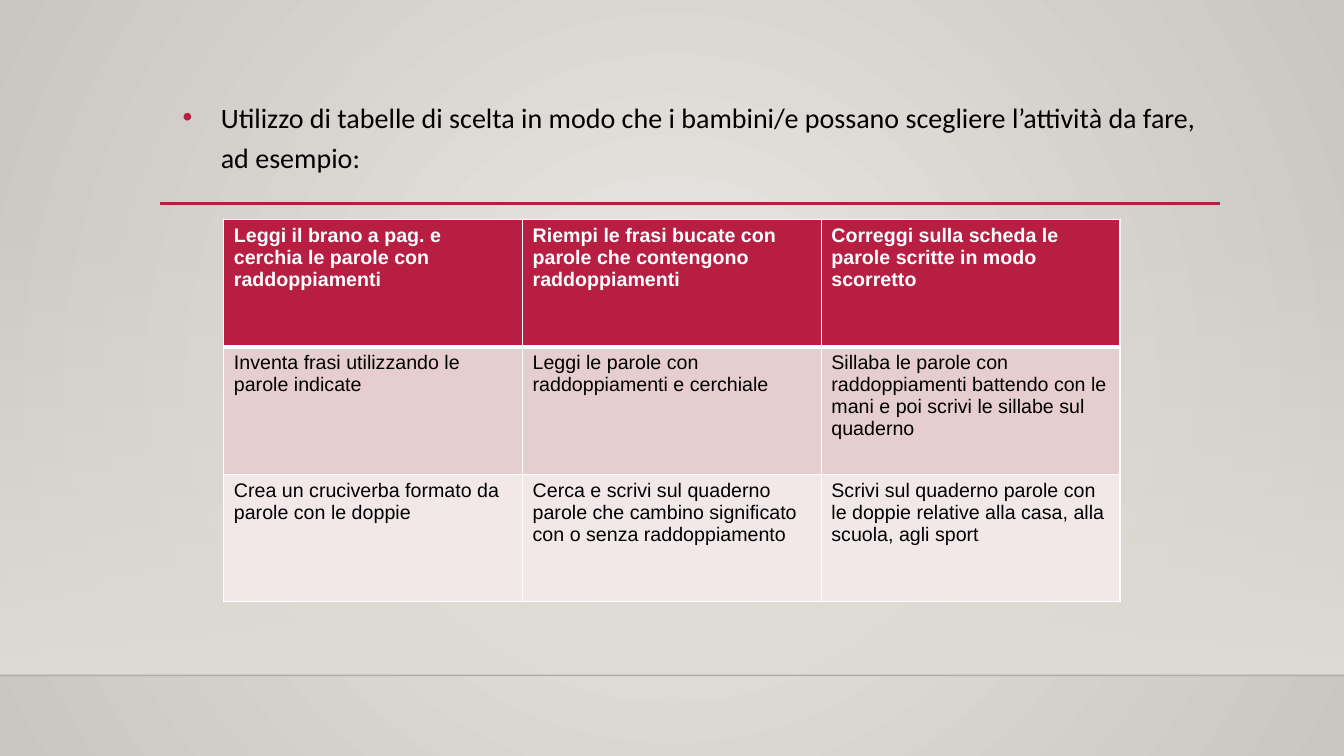
"""Builds the slide with the table of activities on double consonants."""
from lxml.etree import SubElement
from pptx import Presentation
from pptx.dml.color import RGBColor
from pptx.enum.shapes import MSO_CONNECTOR, MSO_SHAPE
from pptx.enum.text import MSO_ANCHOR, MSO_AUTO_SIZE, PP_ALIGN
from pptx.oxml.ns import qn
from pptx.util import Inches, Pt

RED, WHITE, BLACK = "B71E42", "FFFFFF", "000000"


def rgb(value):
    return RGBColor.from_string(value)


def write(tf, text, size=14, font="Arial", color=BLACK, bold=False):
    p = tf.paragraphs[0]
    p.alignment = PP_ALIGN.LEFT
    r = p.add_run()
    r.text = text
    r.font.size = Pt(size)
    r.font.name = font
    r.font.bold = bold
    r.font.color.rgb = rgb(color)
    return p


prs = Presentation()
prs.slide_width, prs.slide_height = Inches(13.33), Inches(7.5)
s = prs.slides.add_slide(prs.slide_layouts[1])
body = s.placeholders[1]
tree = body.element.getparent()
tree.remove(s.shapes.title.element)

bg = s.background.fill
bg.gradient()
for stop, color in zip(bg.gradient_stops, ("EBE9E6", "C9C5C0")):
    stop.color.rgb = rgb(color)
lin = next(s.element.iter(qn("a:lin")))
grad = lin.getparent()
grad.remove(lin)
circle = SubElement(grad, qn("a:path"), path="circle")
SubElement(circle, qn("a:fillToRect"), l="50000", t="50000", r="50000", b="50000")

band = s.shapes.add_shape(MSO_SHAPE.RECTANGLE, 0, Inches(2.21), Inches(13.33), Inches(4.49))
band.shadow.inherit = False
band.line.fill.background()
band.fill.gradient()
band.fill.gradient_angle = 270
for stop in band.fill.gradient_stops:
    stop.color.rgb = rgb("DFDBD5")
SubElement(next(band.element.iter(qn("a:srgbClr"))), qn("a:alpha"), val="0")

for x1, x2, y, color, width, alpha in (
    (0, 13.33, 6.7, "000001", 1, 20),
    (1.59, 12.1, 2.02, RED, 2.5, 100),
):
    rule = s.shapes.add_connector(MSO_CONNECTOR.STRAIGHT, Inches(x1), Inches(y), Inches(x2), Inches(y))
    rule.line.color.rgb = rgb(color)
    rule.line.width = Pt(width)
    SubElement(next(rule.element.iter(qn("a:srgbClr"))), qn("a:alpha"), val=str(alpha * 1000))
    SubElement(rule.element.spPr, qn("a:effectLst"))

tree.append(body.element)
body.left, body.top, body.width, body.height = (Inches(n) for n in (1.59, 0.88, 10.5, 5.1))
tf = body.text_frame
tf.word_wrap = True
tf.auto_size = MSO_AUTO_SIZE.NONE
tf.vertical_anchor = MSO_ANCHOR.TOP
p = write(
    tf,
    "Utilizzo di tabelle di scelta in modo che i bambini/e possano scegliere l’attività da fare, ad esempio:",
    size=20,
    font="Calibri",
)
pPr = p._p.get_or_add_pPr()
pPr.set("marL", str(Inches(0.5)))
pPr.set("indent", str(Inches(-0.38)))
SubElement(SubElement(pPr, qn("a:buClr")), qn("a:srgbClr"), val=RED)
SubElement(pPr, qn("a:buFont"), typeface="Arial")
SubElement(pPr, qn("a:buChar"), char="•")
p.line_spacing = 1.2
p.space_before = Pt(0)

activities = (
    (
        "Leggi il brano a pag. e cerchia le parole con raddoppiamenti",
        "Riempi le frasi bucate con parole che contengono raddoppiamenti",
        "Correggi sulla scheda le parole scritte in modo scorretto",
    ),
    (
        "Inventa frasi utilizzando le parole indicate",
        "Leggi le parole con raddoppiamenti e cerchiale",
        "Sillaba le parole con raddoppiamenti battendo con le mani e poi scrivi le sillabe sul quaderno",
    ),
    (
        "Crea un cruciverba formato da parole con le doppie",
        "Cerca e scrivi sul quaderno parole che cambino significato con o senza raddoppiamento",
        "Scrivi sul quaderno parole con le doppie relative alla casa, alla scuola, agli sport",
    ),
)
table = s.shapes.add_table(3, 3, Inches(2.22), Inches(2.18), Inches(8.89), Inches(3.79)).table
table.horz_banding = False
for i, (row, fill) in enumerate(zip(activities, (RED, "E6CDCF", "F3E8E9"))):
    header = i == 0
    for j, text in enumerate(row):
        cell = table.cell(i, j)
        write(cell.text_frame, text, color=WHITE if header else BLACK, bold=header)
        tcPr = cell._tc.get_or_add_tcPr()
        for side in "LRTB":
            thick = (i, side) in ((0, "B"), (1, "T"))
            ln = SubElement(tcPr, qn(f"a:ln{side}"), w=str(Pt(3 if thick else 1)))
            SubElement(SubElement(ln, qn("a:solidFill")), qn("a:srgbClr"), val=WHITE)
        cell.fill.solid()
        cell.fill.fore_color.rgb = rgb(fill)

prs.save("out.pptx")
